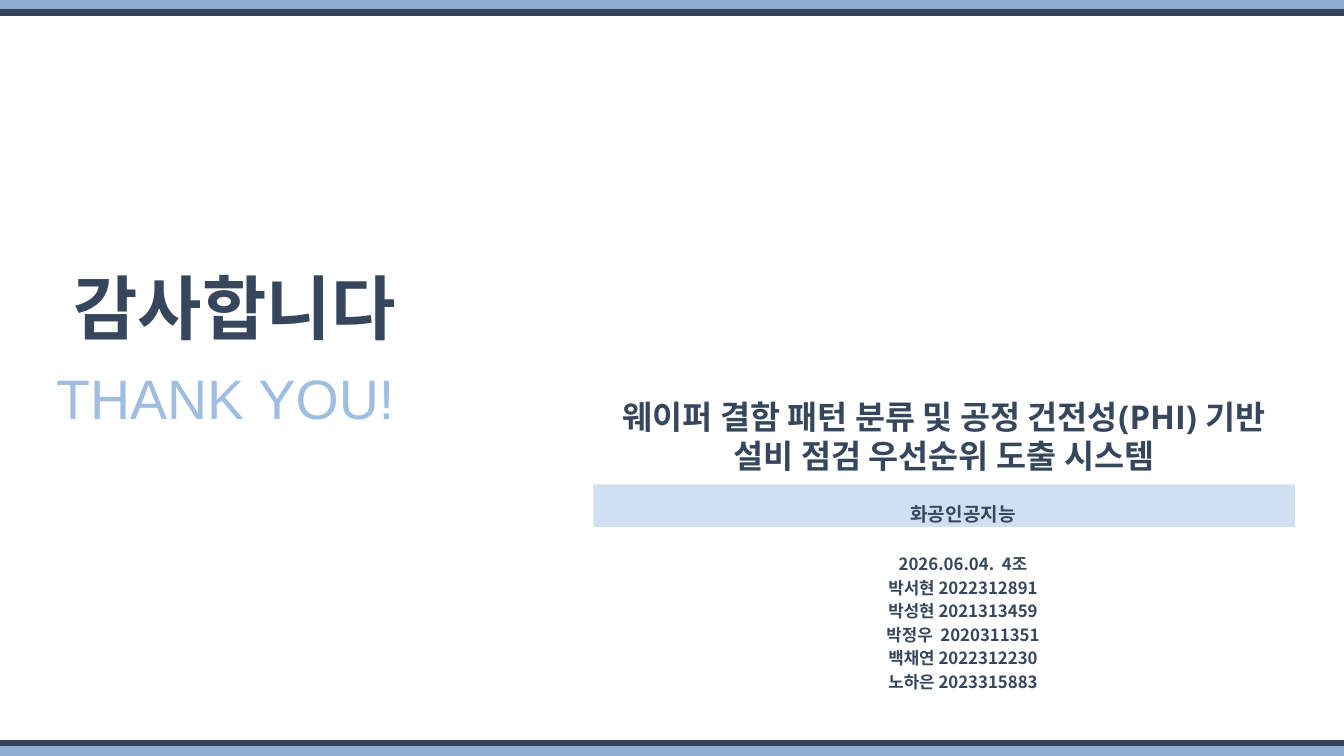
from dataclasses import dataclass

from lxml import etree
from pptx import Presentation
from pptx.dml.color import RGBColor
from pptx.enum.shapes import MSO_CONNECTOR, MSO_SHAPE
from pptx.enum.text import MSO_ANCHOR, MSO_AUTO_SIZE, PP_ALIGN
from pptx.oxml.ns import qn
from pptx.util import Emu, Pt

PX = 9144  # 100 px to the inch
RECTANGLE = MSO_SHAPE.RECTANGLE
STRAIGHT = MSO_CONNECTOR.STRAIGHT
TOP = MSO_ANCHOR.TOP
NO_AUTOSIZE = MSO_AUTO_SIZE.NONE
CENTER = PP_ALIGN.CENTER
SLIDE_W, SLIDE_H = 2000, 1125


@dataclass(frozen=True)
class Theme:
    navy: str = "36475D"
    rule: str = "354457"
    band: str = "8FADD1"
    sky: str = "9FBDE1"
    pale: str = "D0E0F3"
    sans: str = "Open Sans"
    latin: str = "Arial"
    korean: str = "Noto Sans CJK KR"
    thanks_size: float = 75
    english_size: float = 59.5
    project_size: float = 35
    course_size: float = 20.4
    member_size: float = 18
    rule_width: float = 7


THEME = Theme()


@dataclass(frozen=True)
class Box:
    left: int
    top: int
    width: int
    height: int


@dataclass(frozen=True)
class Style:
    font: str
    size: float
    color: str = THEME.navy
    bold: bool = True


@dataclass(frozen=True)
class Line:
    text: str
    spacing: float = 1.4


@dataclass(frozen=True)
class Border:
    band_top: int
    rule_left: int
    rule_y: int


def px(length: int) -> Emu:
    return Emu(length * PX)


def place(shape, box: Box) -> None:
    shape.left, shape.top = px(box.left), px(box.top)
    shape.width, shape.height = px(box.width), px(box.height)


def draw_panel(shapes, box: Box, color: str) -> None:
    panel = shapes.add_shape(RECTANGLE, px(box.left), px(box.top), px(box.width), px(box.height))
    panel.shadow.inherit = False
    panel.fill.solid()
    panel.fill.fore_color.rgb = RGBColor.from_string(color)
    panel.line.fill.background()


def draw_border(shapes, border: Border) -> None:
    draw_panel(shapes, Box(-21, border.band_top, 2035, 15), THEME.band)
    y = px(border.rule_y)
    rule = shapes.add_connector(STRAIGHT, px(border.rule_left), y, px(border.rule_left + 2077), y)
    rule.line.color.rgb = RGBColor.from_string(THEME.rule)
    rule.line.width = Pt(THEME.rule_width)
    etree.SubElement(rule._element.spPr, qn("a:effectLst"))


def write(shape, lines: list[Line], style: Style, inset_x: int = 0, inset_y: int = 0) -> None:
    frame = shape.text_frame
    frame.word_wrap = True
    frame.auto_size = NO_AUTOSIZE
    frame.vertical_anchor = TOP
    frame.margin_left = frame.margin_right = px(inset_x)
    frame.margin_top = frame.margin_bottom = px(inset_y)
    for index, line in enumerate(lines):
        paragraph = frame.paragraphs[0] if index == 0 else frame.add_paragraph()
        paragraph.alignment = CENTER
        paragraph.line_spacing = line.spacing
        run = paragraph.add_run()
        run.text = line.text
        run.font.name = style.font
        run.font.size = Pt(style.size)
        run.font.bold = style.bold
        run.font.color.rgb = RGBColor.from_string(style.color)


def add_text(shapes, box: Box, lines: list[Line], style: Style,
             inset_x: int = 0, inset_y: int = 0) -> None:
    label = shapes.add_textbox(px(box.left), px(box.top), px(box.width), px(box.height))
    write(label, lines, style, inset_x, inset_y)


def main() -> None:
    deck = Presentation()
    deck.slide_width, deck.slide_height = px(SLIDE_W), px(SLIDE_H)
    slide = deck.slides.add_slide(deck.slide_layouts[5])
    shapes = slide.shapes

    # Bands and rules along the top and bottom edges
    for border in (Border(0, -21, 19), Border(SLIDE_H - 15, -37, SLIDE_H - 19)):
        draw_border(shapes, border)

    # Closing words
    thanks = shapes.title
    place(thanks, Box(57, 344, 584, 140))
    write(thanks, [Line("감사합니다")], Style(THEME.sans, THEME.thanks_size))
    add_text(shapes, Box(57, 502, 557, 110), [Line("THANK YOU!")],
             Style(THEME.latin, THEME.english_size, THEME.sky, bold=False))

    # Course name on its strip
    draw_panel(shapes, Box(883, 721, 1044, 63), THEME.pale)
    add_text(shapes, Box(1062, 734, 742, 48), [Line("화공인공지능")],
             Style(THEME.korean, THEME.course_size))

    # Date and team members
    members = ["박서현 2022312891", "박성현 2021313459", "박정우  2020311351",
               "백채연 2022312230", "노하은 2023315883"]
    team = [Line("2026.06.04.  4조", 1.07)] + [Line(member, 1.17) for member in members]
    add_text(shapes, Box(1007, 822, 852, 254), team, Style(THEME.korean, THEME.member_size))

    # Project name
    project = "웨이퍼 결함 패턴 분류 및 공정 건전성(PHI) 기반 설비 점검 우선순위 도출 시스템"
    add_text(shapes, Box(883, 585, 1044, 151), [Line(project, 1.0)],
             Style(THEME.sans, THEME.project_size), inset_x=10, inset_y=5)

    deck.save("out.pptx")


if __name__ == "__main__":
    main()
